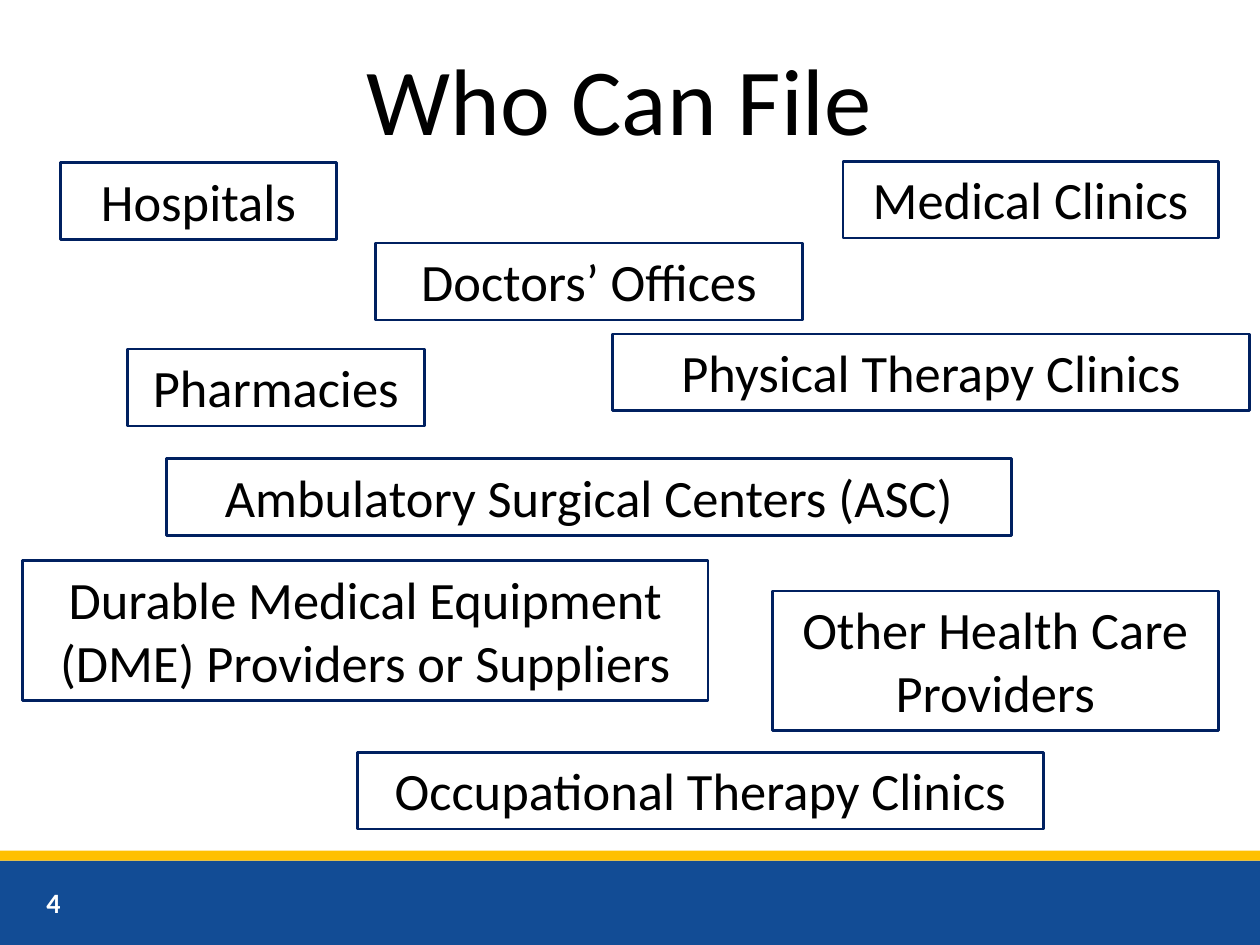
"""Build the "Who Can File" slide of provider types."""
from pptx import Presentation
from pptx.dml.color import RGBColor
from pptx.enum import shapes, text
from pptx.util import Inches, Pt

BLACK = RGBColor(0x00, 0x00, 0x00)
WHITE = RGBColor(0xFF, 0xFF, 0xFF)
NAVY = RGBColor(0x00, 0x20, 0x60)
BLUE = RGBColor(0x12, 0x4C, 0x95)
GOLD = RGBColor(0xFF, 0xC0, 0x00)
FONT = "Calibri"
WIDTH, HEIGHT = 10, 7.5
FOOTER_TOP, STRIPE_TOP = 6.83, 6.75
ONE_LINE, TWO_LINES = 0.61, 1.11

PROVIDERS = [
    ("Hospitals", 0.48, 1.29, 2.19, ONE_LINE),
    ("Medical Clinics", 6.69, 1.28, 2.98, ONE_LINE),
    ("Doctors’ Offices", 2.98, 1.93, 3.39, ONE_LINE),
    ("Pharmacies", 1.01, 2.77, 2.36, ONE_LINE),
    ("Ambulatory Surgical Centers (ASC)", 1.32, 3.64, 6.71, ONE_LINE),
    ("Durable Medical Equipment (DME) Providers or Suppliers", 0.18, 4.45, 5.44, TWO_LINES),
    ("Physical Therapy Clinics", 4.86, 2.65, 5.06, ONE_LINE),
    ("Occupational Therapy Clinics", 2.84, 5.97, 5.44, ONE_LINE),
    ("Other Health Care Providers", 6.13, 4.69, 3.54, TWO_LINES),
]


def write(frame, wording, size, color, align, bold=False):
    """Fill a text frame with one formatted paragraph."""
    frame.text = wording
    frame.word_wrap = True
    paragraph = frame.paragraphs[0]
    paragraph.alignment = align
    font = paragraph.runs[0].font
    font.name, font.size, font.bold = FONT, Pt(size), bold
    font.color.rgb = color
    return paragraph


def add_rectangle(slide, left, top, width, height):
    """Add a plain rectangle without shadow."""
    rectangle = slide.shapes.add_shape(
        shapes.MSO_SHAPE.RECTANGLE, *map(Inches, (left, top, width, height)))
    rectangle.shadow.inherit = False
    return rectangle


def add_band(slide, top, bottom, color):
    """Add a full-width filled band."""
    band = add_rectangle(slide, 0, top, WIDTH, bottom - top)
    band.fill.solid()
    band.fill.fore_color.rgb = color
    band.line.fill.background()


def add_page_number(slide, number):
    """Write the page number on the footer band."""
    page = slide.shapes.add_textbox(*map(Inches, (0.27, 6.96, 2.25, 0.4)))
    page.text_frame.vertical_anchor = text.MSO_ANCHOR.MIDDLE
    write(page.text_frame, number, 16, WHITE, text.PP_ALIGN.LEFT, bold=True)


def set_title(slide, wording):
    """Place and format the title placeholder."""
    title = slide.shapes.title
    title.left, title.top, title.width, title.height = map(Inches, (1.25, 0.45, 7.5, 0.84))
    frame = title.text_frame
    frame.auto_size = text.MSO_AUTO_SIZE.NONE
    frame.vertical_anchor = text.MSO_ANCHOR.BOTTOM
    write(frame, wording, 54, BLACK, text.PP_ALIGN.CENTER).line_spacing = 0.9


def add_provider(slide, name, left, top, width, height):
    """Add an outlined box naming one provider type."""
    box = add_rectangle(slide, left, top, width, height)
    box.fill.background()
    box.line.color.rgb = NAVY
    box.line.width = Pt(1.5)
    box.text_frame.auto_size = text.MSO_AUTO_SIZE.SHAPE_TO_FIT_TEXT
    box.text_frame.vertical_anchor = text.MSO_ANCHOR.TOP
    write(box.text_frame, name, 30, BLACK, text.PP_ALIGN.CENTER)


def main():
    """Assemble and save the slide."""
    deck = Presentation()
    deck.slide_width, deck.slide_height = Inches(WIDTH), Inches(HEIGHT)
    slide = deck.slides.add_slide(deck.slide_layouts[5])
    add_band(slide, FOOTER_TOP, HEIGHT, BLUE)
    add_band(slide, STRIPE_TOP, FOOTER_TOP, GOLD)
    add_page_number(slide, "4")
    set_title(slide, "Who Can File ")
    for provider in PROVIDERS:
        add_provider(slide, *provider)
    deck.save("out.pptx")


if __name__ == "__main__":
    main()
